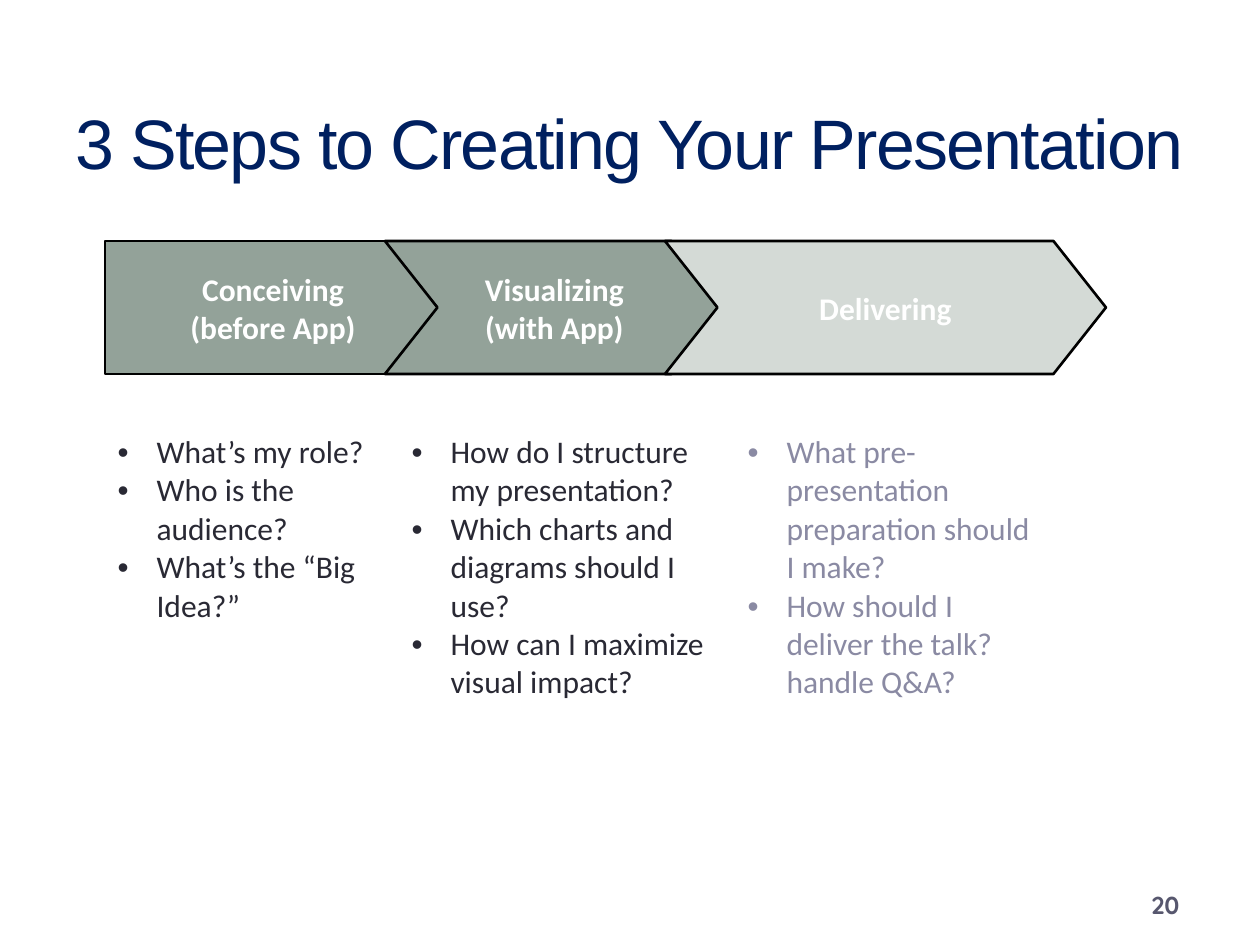
"""Build the slide on the three steps to creating a presentation."""
from dataclasses import dataclass

from lxml import etree
from pptx import Presentation
from pptx.dml.color import RGBColor
from pptx.enum.shapes import MSO_SHAPE as Shape
from pptx.enum.text import MSO_ANCHOR as Anchor, PP_ALIGN as Align
from pptx.oxml.ns import qn
from pptx.util import Emu, Pt

SCALE = 914400 / 126
COLORS = {
    "title": "002060", "number": "57576E", "text": "292934", "muted": "8A8AA3",
    "step": "93A299", "step_muted": "D4DAD6", "white": "FFFFFF", "outline": "000000",
}
STEP_TOP, STEP_HEIGHT = 241, 133
TABLE_LEFT, TABLE_TOP, TABLE_HEIGHT = 105, 427, 391
BULLET_INDENT = 39


@dataclass(frozen=True)
class Step:
    label: str
    left: int
    width: int
    point: float
    fill: str
    column_width: int
    questions: tuple[str, ...]
    text_color: str = "text"


STEPS = (
    Step("Conceiving\v(before App)", 105, 336, 0, "step", 294,
         ("What’s my role?", "Who is the audience?", "What’s the “Big Idea?”")),
    Step("Visualizing (with App)", 385, 339, 0.395, "step", 336,
         ("How do I structure my presentation?",
          "Which charts and diagrams should I use?",
          "How can I maximize visual impact?")),
    Step("Delivering", 665, 441, 0.395, "step_muted", 315,
         ("What pre-presentation preparation should I make?",
          "How should I deliver the talk? handle Q&A?"), "muted"),
)


def px(length: int) -> Emu:
    """Turn pixels into EMU."""
    return Emu(round(length * SCALE))


def rgb(name: str) -> RGBColor:
    """Look up a named colour."""
    return RGBColor.from_string(COLORS[name])


def style(para, font: str, size: int, color: str, bold: bool = False) -> None:
    """Set the font of a whole paragraph."""
    para.font.name, para.font.size, para.font.bold = font, Pt(size), bold
    para.font.color.rgb = rgb(color)


def add_text(page, text: str, area: tuple[int, int, int, int], align: Align):
    """Add a wrapped, vertically centred text box and return its paragraph."""
    frame = page.shapes.add_textbox(*map(px, area)).text_frame
    frame.word_wrap, frame.vertical_anchor = True, Anchor.MIDDLE
    para = frame.paragraphs[0]
    para.text, para.alignment = text, align
    return para


def add_bullet(para) -> None:
    """Give a paragraph a hanging round bullet."""
    props = para._p.get_or_add_pPr()
    props.set("marL", str(px(BULLET_INDENT)))
    props.set("indent", str(-px(BULLET_INDENT)))
    etree.SubElement(props, qn("a:buFont")).set("typeface", "Arial")
    etree.SubElement(props, qn("a:buChar")).set("char", "•")


def add_questions(page, steps: tuple[Step, ...]) -> None:
    """Add the table with one column of questions for each step."""
    width = sum(step.column_width for step in steps)
    area = (TABLE_LEFT, TABLE_TOP, width, TABLE_HEIGHT)
    table = page.shapes.add_table(1, len(steps), *map(px, area)).table
    table.first_row = table.horz_banding = False
    for index, step in enumerate(steps):
        table.columns[index].width = px(step.column_width)
        cell = table.cell(0, index)
        cell.fill.solid()
        cell.fill.fore_color.rgb = rgb("white")
        cell.text = "\n".join(step.questions)
        for para in cell.text_frame.paragraphs:
            add_bullet(para)
            style(para, "Calibri", 18, step.text_color)


def add_step(page, step: Step) -> None:
    """Add the chevron of one step."""
    area = (step.left, STEP_TOP, step.width, STEP_HEIGHT)
    shape = page.shapes.add_shape(Shape.CHEVRON, *map(px, area))
    shape.adjustments[0] = step.point
    shape.shadow.inherit = False
    shape.fill.solid()
    shape.fill.fore_color.rgb = rgb(step.fill)
    shape.line.color.rgb = rgb("outline")
    shape.line.width = Pt(1.5)
    frame = shape.text_frame
    frame.word_wrap, frame.vertical_anchor = True, Anchor.MIDDLE
    para = frame.paragraphs[0]
    para.text, para.alignment = step.label, Align.CENTER
    style(para, "Calibri", 18, "white", bold=True)


def main() -> None:
    """Build and save the deck."""
    deck = Presentation()
    deck.slide_width, deck.slide_height = px(1260), px(945)
    page = deck.slides.add_slide(deck.slide_layouts[6])

    title = add_text(page, "3 Steps to Creating Your Presentation",
                     (63, 73, 1134, 136), Align.LEFT)
    style(title, "Arial", 40, "title")
    title.runs[0]._r.get_or_add_rPr().set("spc", "-100")
    number = add_text(page, "20", (1092, 882, 147, 45), Align.CENTER)
    style(number, "Quicksand", 14, "number", bold=True)

    add_questions(page, STEPS)
    for step in STEPS:
        add_step(page, step)
    deck.save("out.pptx")


if __name__ == "__main__":
    main()
